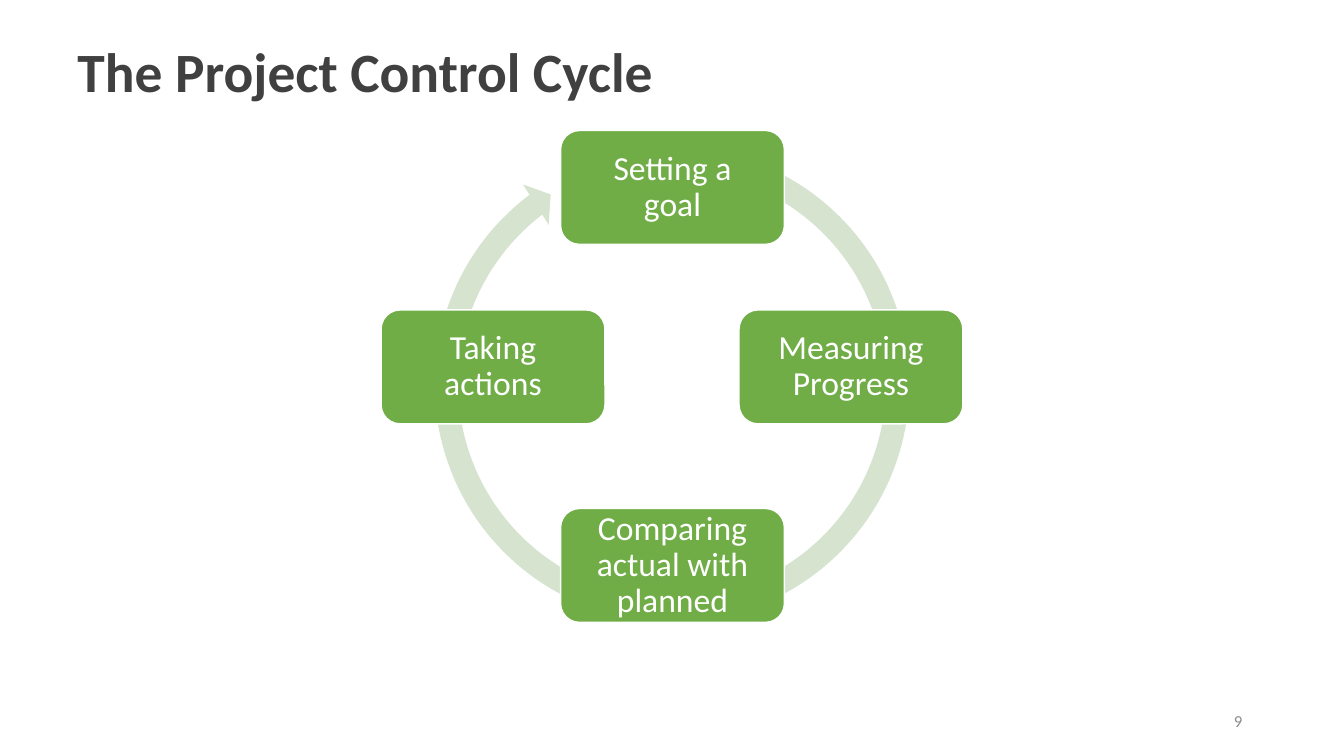
from dataclasses import dataclass

from pptx import Presentation
from pptx.dml.color import RGBColor
from pptx.enum import shapes, text
from pptx.util import Inches, Pt


@dataclass(frozen=True)
class Theme:
    font: str = "Calibri"
    title_color: str = "404041"
    number_color: str = "8C8C8C"
    step_fill: str = "70AD47"
    arrow_fill: str = "D5E3CF"
    white: str = "FFFFFF"
    title_size: float = 39.6
    step_size: float = 24
    number_size: float = 12


THEME = Theme()
STEP_WIDTH, STEP_HEIGHT = 2.22, 1.13
# Each step of the cycle with the centre of its box
STEPS = [
    ("Setting a goal", 6.67, 1.86),
    ("Measuring Progress", 8.44, 3.64),
    ("Comparing actual with planned", 6.67, 5.61),
    ("Taking actions", 4.89, 3.64),
]


def write(shape, words, size, color, align, anchor, bold=False, spacing=1.0):
    frame = shape.text_frame
    frame.word_wrap = True
    frame.vertical_anchor = anchor
    frame.text = words
    para = frame.paragraphs[0]
    para.alignment = align
    para.line_spacing = spacing
    font = para.runs[0].font
    font.name, font.size, font.bold = THEME.font, Pt(size), bold
    font.color.rgb = RGBColor.from_string(color)
    return frame


def add_label(page, area, *args, **style):
    box = page.shapes.add_textbox(*map(Inches, area))
    return write(box, *args, **style)


def add_filled(page, kind, area, fill):
    shape = page.shapes.add_shape(kind, *map(Inches, area))
    shape.shadow.inherit = False
    shape.fill.solid()
    shape.fill.fore_color.rgb = RGBColor.from_string(fill)
    shape.line.fill.background()
    return shape


def add_cycle_arrow(page):
    arrow = add_filled(page, shapes.MSO_SHAPE.CIRCULAR_ARROW,
                       (4.19, 1.34, 4.95, 4.95), THEME.arrow_fill)
    # Band width, head angle, end angle, start angle, head width
    for index, value in enumerate((0.047, 2.729, 139.737, 173.013, 0.048)):
        arrow.adjustments[index] = value


def add_step(page, words, center_x, center_y):
    area = (center_x - STEP_WIDTH / 2, center_y - STEP_HEIGHT / 2,
            STEP_WIDTH, STEP_HEIGHT)
    step = add_filled(page, shapes.MSO_SHAPE.ROUNDED_RECTANGLE, area,
                      THEME.step_fill)
    step.line.color.rgb = RGBColor.from_string(THEME.white)
    step.line.width = Pt(1)
    frame = write(step, words, THEME.step_size, THEME.white,
                  text.PP_ALIGN.CENTER, text.MSO_ANCHOR.MIDDLE, spacing=0.9)
    frame.margin_left = frame.margin_right = Inches(0.15)
    frame.margin_top = frame.margin_bottom = Inches(0.15)


def main():
    deck = Presentation()
    deck.slide_width, deck.slide_height = Inches(13.33), Inches(7.5)
    page = deck.slides.add_slide(deck.slide_layouts[6])

    # Title
    title = add_label(page, (0.67, 0.42, 12.11, 1.25),
                      "The Project Control Cycle", THEME.title_size,
                      THEME.title_color, text.PP_ALIGN.LEFT,
                      text.MSO_ANCHOR.TOP, bold=True, spacing=0.9)
    title.margin_top = Inches(0.02)

    # Cycle
    add_cycle_arrow(page)
    for step in STEPS:
        add_step(page, *step)

    # Slide number
    add_label(page, (9.42, 6.95, 3, 0.4), "9", THEME.number_size,
              THEME.number_color, text.PP_ALIGN.RIGHT, text.MSO_ANCHOR.MIDDLE)

    deck.save("out.pptx")


if __name__ == "__main__":
    main()
